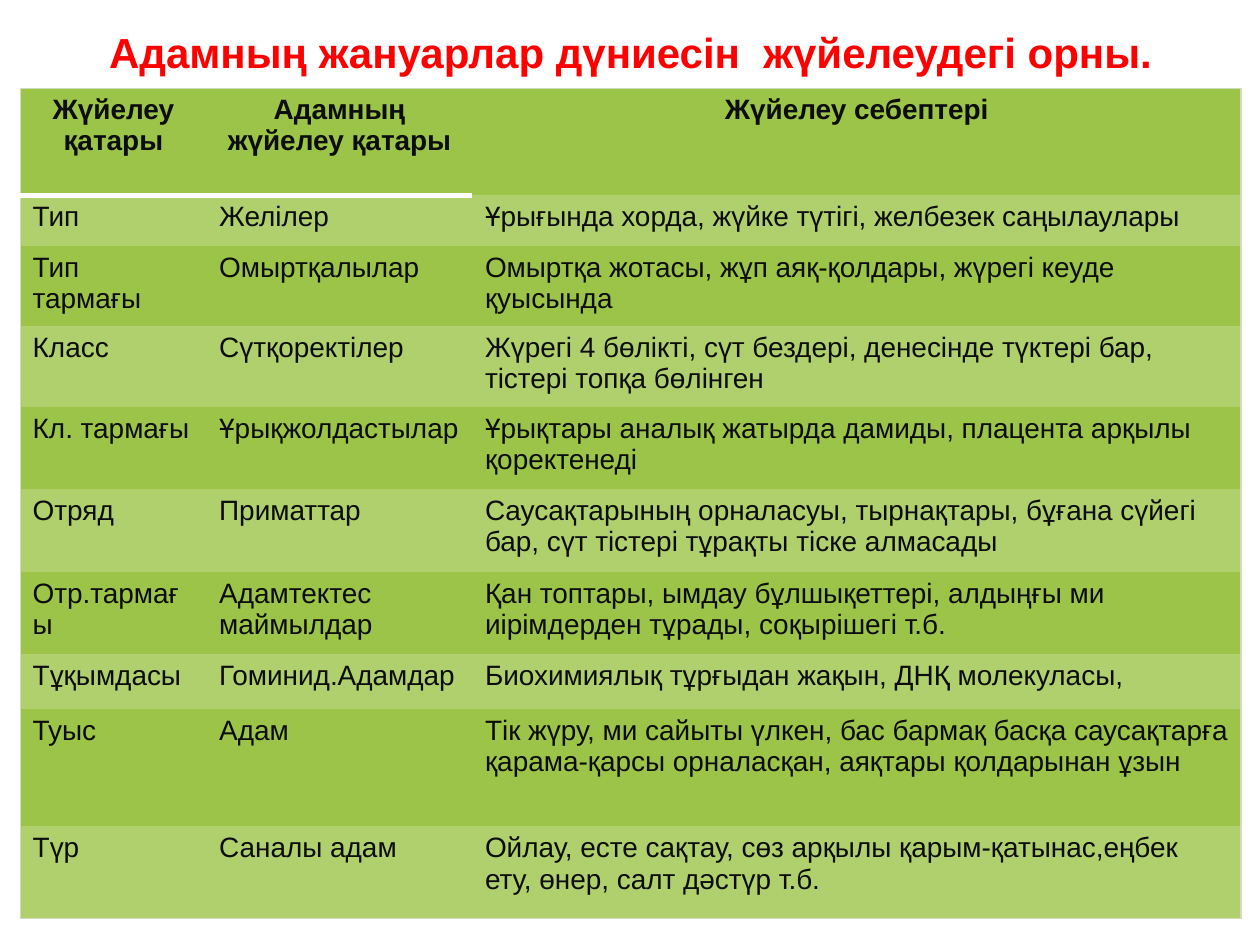
"""Builds a slide with a table on the human place in animal taxonomy."""
import lxml.etree
import pptx
import pptx.dml.color
import pptx.enum.text
import pptx.oxml.ns
import pptx.util

inch = pptx.util.Inches
center = pptx.enum.text.PP_ALIGN.CENTER
qn = pptx.oxml.ns.qn


def style(para, size, hue, bold):
    for run in para.runs:
        font = run.font
        font.name, font.size, font.bold = "Arial", pptx.util.Pt(size), bold
        font.color.rgb = pptx.dml.color.RGBColor.from_string(hue)


def edge(cell, side, hue, width):
    line = lxml.etree.SubElement(cell._tc.get_or_add_tcPr(), qn("a:ln" + side))
    line.set("w", str(pptx.util.Pt(width)))
    fill = lxml.etree.SubElement(line, qn("a:solidFill"))
    lxml.etree.SubElement(fill, qn("a:srgbClr")).set("val", hue)


deck = pptx.Presentation()
deck.slide_width, deck.slide_height = inch(10), inch(7.5)
slide = deck.slides.add_slide(deck.slide_layouts[6])
left, width = inch(0.16), inch(9.69)

title = slide.shapes.add_textbox(left, inch(0.16), width, inch(0.51)).text_frame
title.word_wrap = True
title.text = "Адамның жануарлар дүниесін  жүйелеудегі орны."
title.paragraphs[0].alignment = center
style(title.paragraphs[0], 24, "FF0000", True)

data = [
    ("Жүйелеу қатары", "Адамның жүйелеу қатары", "Жүйелеу себептері"),
    ("Тип", "Желілер", "Ұрығында хорда, жүйке түтігі, желбезек саңылаулары"),
    ("Тип тармағы", "Омыртқалылар",
     "Омыртқа жотасы, жұп аяқ-қолдары, жүрегі кеуде қуысында"),
    ("Класс", "Сүтқоректілер",
     "Жүрегі 4 бөлікті, сүт бездері, денесінде түктері бар, тістері топқа бөлінген"),
    ("Кл. тармағы", "Ұрықжолдастылар",
     "Ұрықтары аналық жатырда дамиды, плацента арқылы қоректенеді"),
    ("Отряд", "Приматтар",
     "Саусақтарының орналасуы, тырнақтары, бұғана сүйегі бар, "
     "сүт тістері тұрақты тіске алмасады"),
    ("Отр.тармағы", "Адамтектес маймылдар",
     "Қан топтары, ымдау бұлшықеттері, алдыңғы ми иірімдерден тұрады, соқырішегі т.б."),
    ("Тұқымдасы", "Гоминид.Адамдар", "Биохимиялық тұрғыдан жақын, ДНҚ молекуласы,"),
    ("Туыс", "Адам",
     "Тік жүру, ми сайыты үлкен, бас бармақ басқа саусақтарға "
     "қарама-қарсы орналасқан, аяқтары қолдарынан ұзын"),
    ("Түр", "Саналы адам",
     "Ойлау, есте сақтау, сөз арқылы қарым-қатынас,еңбек ету, өнер, салт дәстүр т.б."),
]
wide = [1.48, 2.11, 6.1]
high = [0.85, 0.4, 0.64, 0.64, 0.65, 0.66, 0.65, 0.44, 0.93, 0.73]
last = len(data) - 1

frame = slide.shapes.add_table(len(high), len(wide), left, inch(0.7), width, inch(sum(high)))
table = frame.table
for node in frame._element.iter(qn("a:tableStyleId")):
    node.text = "{2D5ABB26-0587-4C30-8999-92F81FD0307C}"
for col, size in zip(table.columns, wide):
    col.width = inch(size)

for r, texts in enumerate(data):
    table.rows[r].height = inch(high[r])
    for c, text in enumerate(texts):
        cell = table.cell(r, c)
        for side, outer in (("L", c == 0), ("R", c == 2), ("T", r == 0), ("B", r == last)):
            if outer:
                edge(cell, side, "D0DCBF", 0.75)
        if r == 0 and c < 2:
            edge(cell, "B", "FFFFFF", 3)
        cell.fill.solid()
        cell.fill.fore_color.rgb = pptx.dml.color.RGBColor.from_string(
            "AFD06D" if r % 2 else "9BC448")
        cell.text_frame.text = text
        para = cell.text_frame.paragraphs[0]
        if r == 0:
            para.alignment = center
        style(para, 16, "0D0D0D", r == 0)

deck.save("out.pptx")
